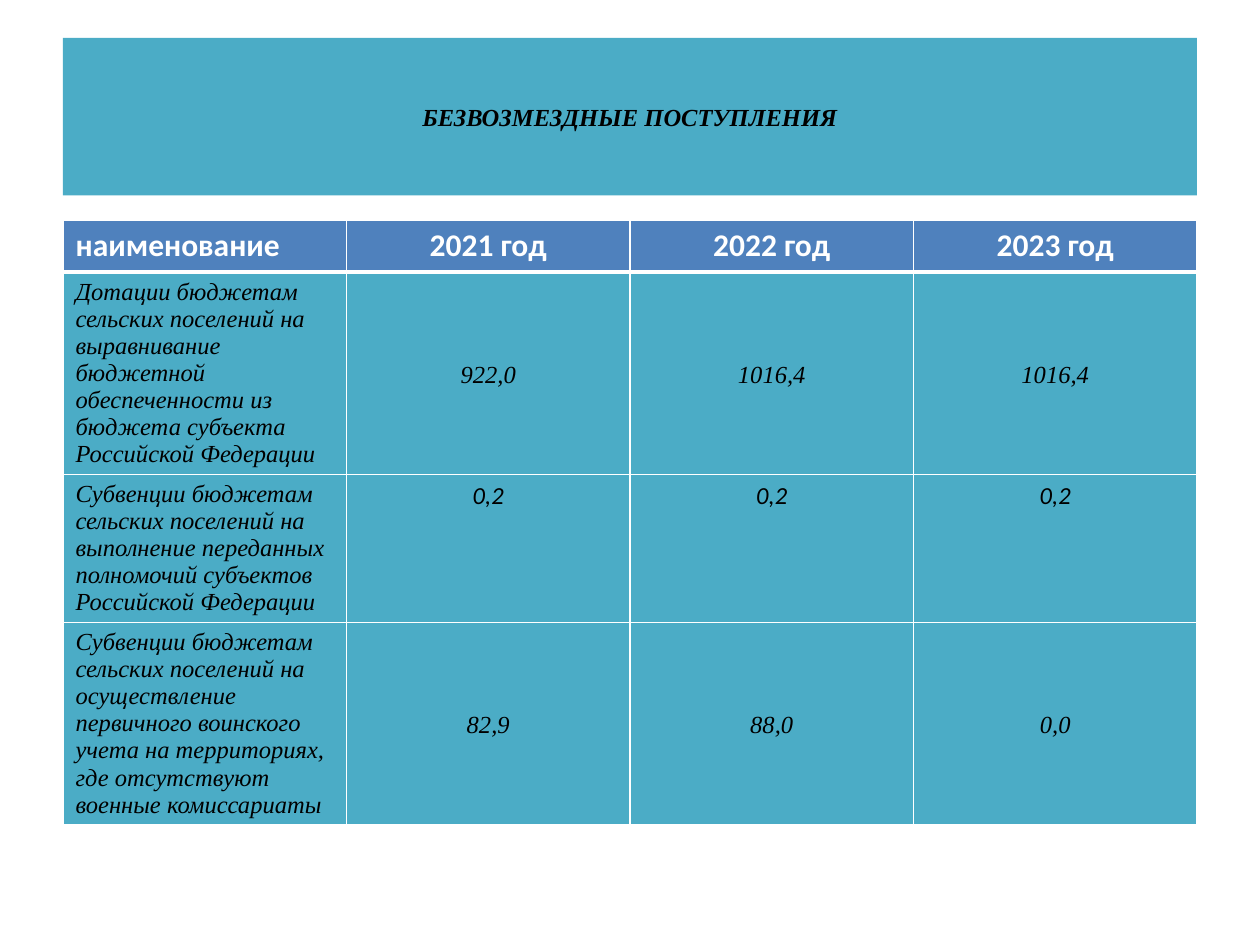
from dataclasses import dataclass

from lxml.etree import SubElement
from pptx import Presentation
from pptx.dml.color import RGBColor
from pptx.enum.shapes import MSO_SHAPE as Shape
from pptx.enum.text import MSO_ANCHOR as Anchor, PP_ALIGN as Align
from pptx.oxml.ns import qn
from pptx.util import Inches, Pt


@dataclass(frozen=True)
class Theme:
    teal: str = "4BACC6"
    blue: str = "4F81BD"
    white: str = "FFFFFF"
    black: str = "000000"
    serif: str = "Times New Roman"
    sans: str = "Calibri"
    body_size: int = 14
    header_size: int = 18
    thin: int = 1
    thick: int = 3


def paint(item, color):
    item.fill.solid()
    item.fill.fore_color.rgb = RGBColor.from_string(color)


def write(frame, text, *, font, size, color, bold=False, italic=False,
          align=Align.LEFT, spacing=None):
    para = frame.paragraphs[0]
    para.alignment = align
    para.line_spacing = spacing
    span = para.add_run()
    span.text = text
    span.font.name = font
    span.font.size = Pt(size)
    span.font.bold = bold
    span.font.italic = italic
    span.font.color.rgb = RGBColor.from_string(color)


def add_borders(cell, color, **widths):
    """Draw the cell sides L, R, T and B with the given widths in points."""
    properties = cell._tc.get_or_add_tcPr()
    for side, width in widths.items():
        line = SubElement(properties, qn(f"a:ln{side}"), w=str(Pt(width)))
        fill = SubElement(line, qn("a:solidFill"))
        SubElement(fill, qn("a:srgbClr"), val=color)


class SlideBuilder:
    COLUMNS, ROWS = 20, 30

    def __init__(self, deck, theme):
        self.theme = theme
        self.page = deck.slides.add_slide(deck.slide_layouts[6])
        self.column = deck.slide_width / self.COLUMNS
        self.row = deck.slide_height / self.ROWS

    def area(self, left, top, width, height):
        return (round(left * self.column), round(top * self.row),
                round(width * self.column), round(height * self.row))

    def banner(self, text, *place):
        theme = self.theme
        box = self.page.shapes.add_shape(Shape.RECTANGLE, *self.area(*place))
        box.shadow.inherit = False
        paint(box, theme.teal)
        box.line.fill.background()
        box.text_frame.word_wrap = True
        box.text_frame.vertical_anchor = Anchor.MIDDLE
        write(box.text_frame, text, font=theme.serif, size=theme.body_size,
              color=theme.black, bold=True, italic=True, align=Align.CENTER)

    def table(self, headers, records, *place):
        table = self.page.shapes.add_table(
            len(records) + 1, len(headers), *self.area(*place)).table
        for index, text in enumerate(headers):
            self.header_cell(table.cell(0, index), text, index)
        for number, (name, values, centred) in enumerate(records, 1):
            for index, text in enumerate((name, *values)):
                self.body_cell(table.cell(number, index), text, index,
                               centred, first=number == 1)

    def header_cell(self, cell, text, index):
        theme = self.theme
        add_borders(cell, theme.white, L=theme.thin, R=theme.thin,
                    T=theme.thin, B=theme.thick)
        paint(cell, theme.blue)
        write(cell.text_frame, text, font=theme.sans, size=theme.header_size,
              color=theme.white, bold=True,
              align=Align.CENTER if index else Align.LEFT)

    def body_cell(self, cell, text, index, centred, first):
        theme = self.theme
        is_value = index > 0
        in_middle = is_value and centred
        add_borders(cell, theme.white, L=theme.thin, R=theme.thin,
                    T=theme.thick if first else theme.thin, B=theme.thin)
        paint(cell, theme.teal)
        if in_middle:
            cell.vertical_anchor = Anchor.MIDDLE
            cell.margin_left = cell.margin_right = Inches(0.07)
            cell.margin_top = cell.margin_bottom = 0
        write(cell.text_frame, text,
              font=theme.sans if is_value and not centred else theme.serif,
              size=theme.body_size, color=theme.black, italic=True,
              align=Align.CENTER if is_value else Align.LEFT,
              spacing=1.15 if in_middle else None)


HEADERS = ("наименование", "2021 год", "2022 год", "2023 год")

# Name, yearly values, whether the values stand in the middle of the row
RECORDS = (
    ("Дотации бюджетам сельских поселений на выравнивание бюджетной "
     "обеспеченности из бюджета субъекта Российской Федерации",
     ("922,0", "1016,4", "1016,4"), True),
    ("Субвенции бюджетам сельских поселений на выполнение переданных "
     "полномочий субъектов Российской Федерации",
     ("0,2", "0,2", "0,2"), False),
    ("Субвенции бюджетам сельских поселений на осуществление первичного "
     "воинского учета на территориях, где отсутствуют военные комиссариаты",
     ("82,9", "88,0", "0,0"), True),
)


def main():
    deck = Presentation()
    deck.slide_width, deck.slide_height = Inches(10), Inches(7.5)
    slide = SlideBuilder(deck, Theme())

    # Title
    slide.banner("БЕЗВОЗМЕЗДНЫЕ ПОСТУПЛЕНИЯ", 1, 1.2, 18, 5)

    # Receipts by year; rows grow to fit their text
    slide.table(HEADERS, RECORDS, 1, 7, 18, 6.56)

    deck.save("out.pptx")


if __name__ == "__main__":
    main()
